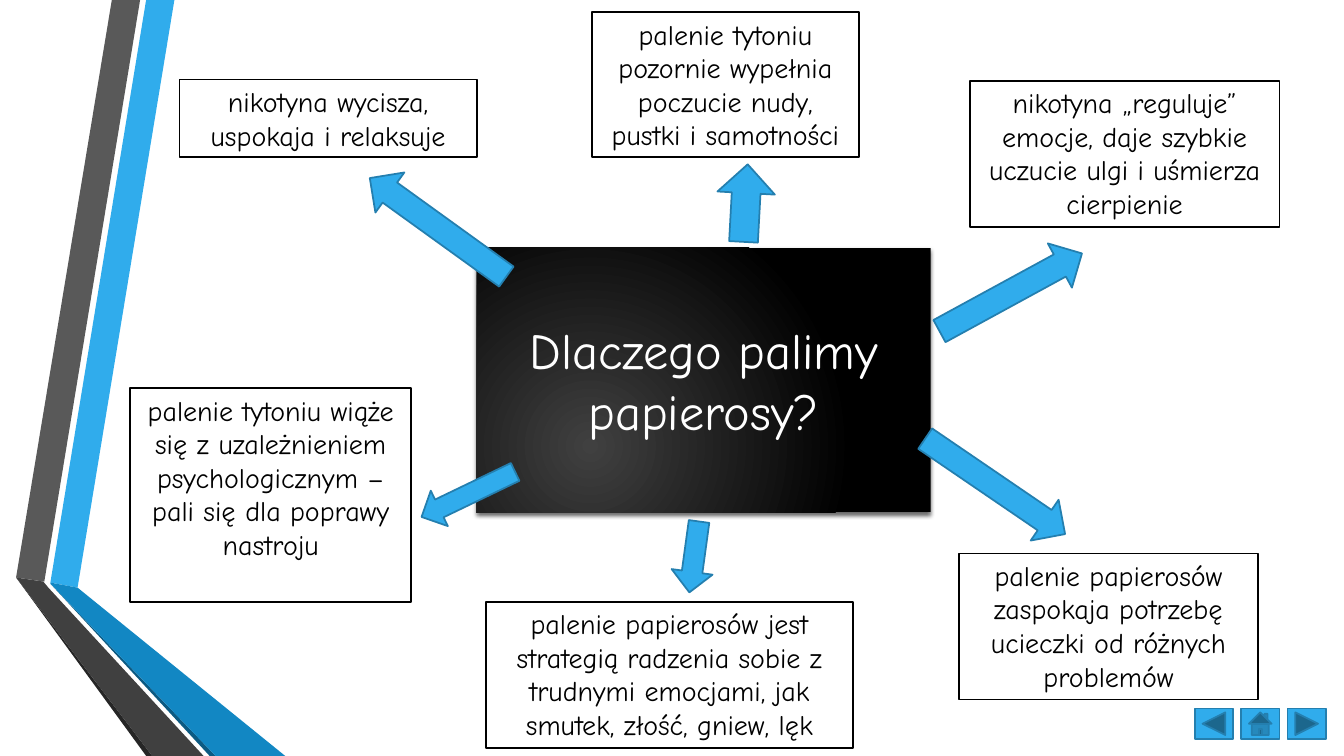
from lxml.etree import SubElement
from pptx import Presentation
from pptx.dml.color import RGBColor
from pptx.enum.shapes import MSO_SHAPE
from pptx.enum.text import MSO_ANCHOR, PP_ALIGN
from pptx.oxml.ns import qn
from pptx.util import Inches, Pt

COLORS = {
    "white": "FFFFFF", "black": "000000", "blue": "30ACEC", "outline": "247FAF",
    "shade": "1287C3", "navy": "0C5A82", "gray": "595959", "charcoal": "404040",
    "ink": "262626",
}
RIBBONS = [
    ("blue", [(0.5, 5.78), (0.77, 5.83), (1.73, 0), (1.45, 0)]),
    ("gray", [(1.39, 0), (1.11, 0), (0.16, 5.73), (0.44, 5.77)]),
    ("ink", [(0.16, 5.73), (1.45, 7.5), (1.51, 7.5)]),
    ("navy", [(0.5, 5.79), (2.08, 7.5), (2.14, 7.5)]),
    ("shade", [(0.5, 5.79), (2.14, 7.5), (2.83, 7.5), (0.77, 5.83), (0.5, 5.78)]),
    ("charcoal", [(2.02, 7.5), (0.48, 5.83), (0.43, 5.77), (0.16, 5.73), (1.51, 7.5)]),
]
QUESTION = ("Dlaczego palimy papierosy?", (4.73, 2.46, 4.5, 2.62))
PROCESS, RECTANGLE = MSO_SHAPE.FLOWCHART_PROCESS, MSO_SHAPE.RECTANGLE
REASONS = [
    ("nikotyna wycisza, uspokaja i relaksuje",
     PROCESS, (1.78, 0.79, 2.95, 0.77), (3.51, 2.01, 1.67, 0.49), 215.8),
    ("palenie papierosów zaspokaja potrzebę ucieczki od różnych problemów",
     PROCESS, (9.51, 5.49, 2.97, 1.45), (9.03, 4.58, 1.68, 0.49), 34.3),
    ("palenie tytoniu pozornie wypełnia poczucie nudy, pustki i samotności",
     PROCESS, (5.87, 0.12, 2.65, 1.44), (7.01, 1.73, 0.77, 0.57), 273.1),
    ("nikotyna „reguluje” emocje, daje szybkie uczucie ulgi i uśmierza cierpienie",
     RECTANGLE, (9.62, 0.8, 3.07, 1.45), (9.22, 2.65, 1.61, 0.5), 331.4),
    ("palenie papierosów jest strategią radzenia sobie z trudnymi emocjami, "
     "jak smutek, złość, gniew, lęk",
     RECTANGLE, (4.82, 5.97, 3.64, 1.45), (6.53, 5.32, 0.71, 0.41), 97.8),
    ("palenie tytoniu wiąże się z uzależnieniem psychologicznym – pali się dla "
     "poprawy nastroju",
     RECTANGLE, (1.29, 3.85, 2.79, 2.12), (4.13, 4.71, 1.03, 0.39), 154.3),
]
BUTTONS = [
    MSO_SHAPE.ACTION_BUTTON_BACK_OR_PREVIOUS,
    MSO_SHAPE.ACTION_BUTTON_HOME,
    MSO_SHAPE.ACTION_BUTTON_FORWARD_OR_NEXT,
]
BUTTON_LEFT, BUTTON_TOP, BUTTON_STEP = 11.85, 7.03, 0.46
BUTTON_SIZE = (0.38, 0.3)


def color(name):
    return RGBColor.from_string(COLORS[name])


def paint(shape, fill, line=None):
    shape.shadow.inherit = False
    shape.fill.solid()
    shape.fill.fore_color.rgb = color(fill)
    if line:
        shape.line.color.rgb = color(line)
        shape.line.width = Pt(1.25)
    else:
        shape.line.fill.background()


def add_shape(slide, kind, box, fill, line=None):
    shape = slide.shapes.add_shape(kind, *map(Inches, box))
    paint(shape, fill, line)
    return shape


def write(shape, text, size, ink, anchor):
    frame = shape.text_frame
    for name, value in {"word_wrap": True, "vertical_anchor": anchor}.items():
        setattr(frame, name, value)
    paragraph = frame.paragraphs[0]
    paragraph.alignment = PP_ALIGN.CENTER
    run = paragraph.add_run()
    run.text = text
    for name, value in {"name": "Comic Neue", "size": Pt(size)}.items():
        setattr(run.font, name, value)
    run.font.color.rgb = color(ink)


def add_ribbon(slide, fill, points):
    corners = [(Inches(x), Inches(y)) for x, y in points]
    builder = slide.shapes.build_freeform(*corners[0])
    builder.add_line_segments(corners[1:], close=True)
    paint(builder.convert_to_shape(), fill)


def add_question(slide, text, box):
    shape = add_shape(slide, RECTANGLE, box, "black")
    shape.fill.gradient()
    for stop, name in zip(shape.fill.gradient_stops, ("charcoal", "black")):
        stop.color.rgb = color(name)
    properties = shape.element.spPr
    gradient = properties.find(qn("a:gradFill"))
    gradient.remove(gradient.find(qn("a:lin")))
    glow = SubElement(gradient, qn("a:path"), {"path": "circle"})
    SubElement(glow, qn("a:fillToRect"),
               {"l": "50000", "t": "100000", "r": "100000", "b": "50000"})
    shadow = SubElement(properties.find(qn("a:effectLst")), qn("a:outerShdw"),
                        {"blurRad": "38100", "dist": "25400", "dir": "5400000"})
    shade = SubElement(shadow, qn("a:srgbClr"), {"val": COLORS["black"]})
    SubElement(shade, qn("a:alpha"), {"val": "60000"})
    write(shape, text, 36, "white", MSO_ANCHOR.MIDDLE)


def main():
    """Build the slide about the reasons for smoking."""
    presentation = Presentation()
    presentation.slide_width, presentation.slide_height = Inches(13.33), Inches(7.5)
    slide = presentation.slides.add_slide(presentation.slide_layouts[6])
    for fill, points in RIBBONS:
        add_ribbon(slide, fill, points)
    add_question(slide, *QUESTION)
    for text, kind, box, arrow_box, angle in REASONS:
        reason = add_shape(slide, kind, box, "white", "black")
        write(reason, text, 20, "black", MSO_ANCHOR.TOP)
        arrow = add_shape(slide, MSO_SHAPE.RIGHT_ARROW, arrow_box, "blue", "outline")
        arrow.rotation = angle
    for index, kind in enumerate(BUTTONS):
        left = BUTTON_LEFT + index * BUTTON_STEP
        add_shape(slide, kind, (left, BUTTON_TOP, *BUTTON_SIZE), "blue", "outline")
    presentation.save("out.pptx")


if __name__ == "__main__":
    main()
